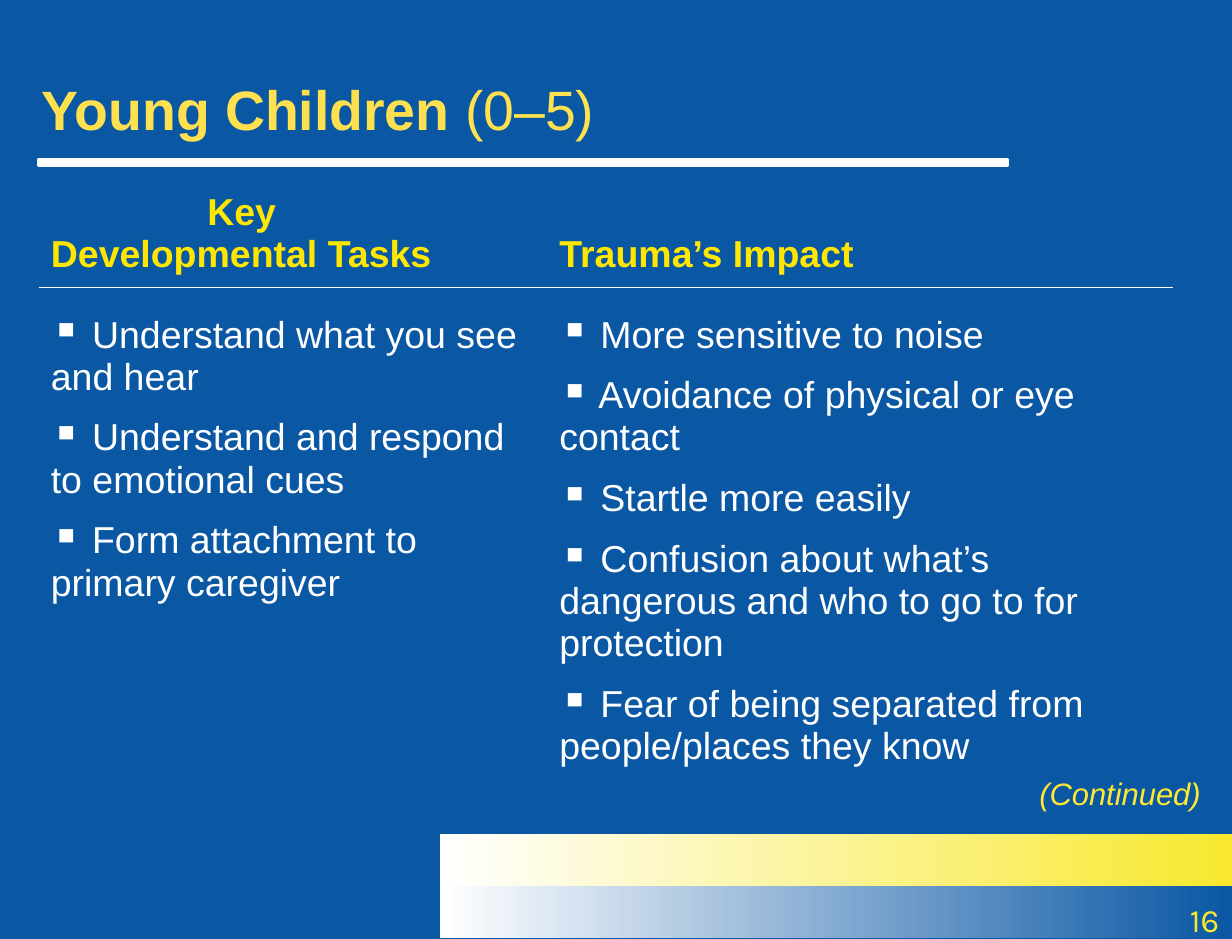
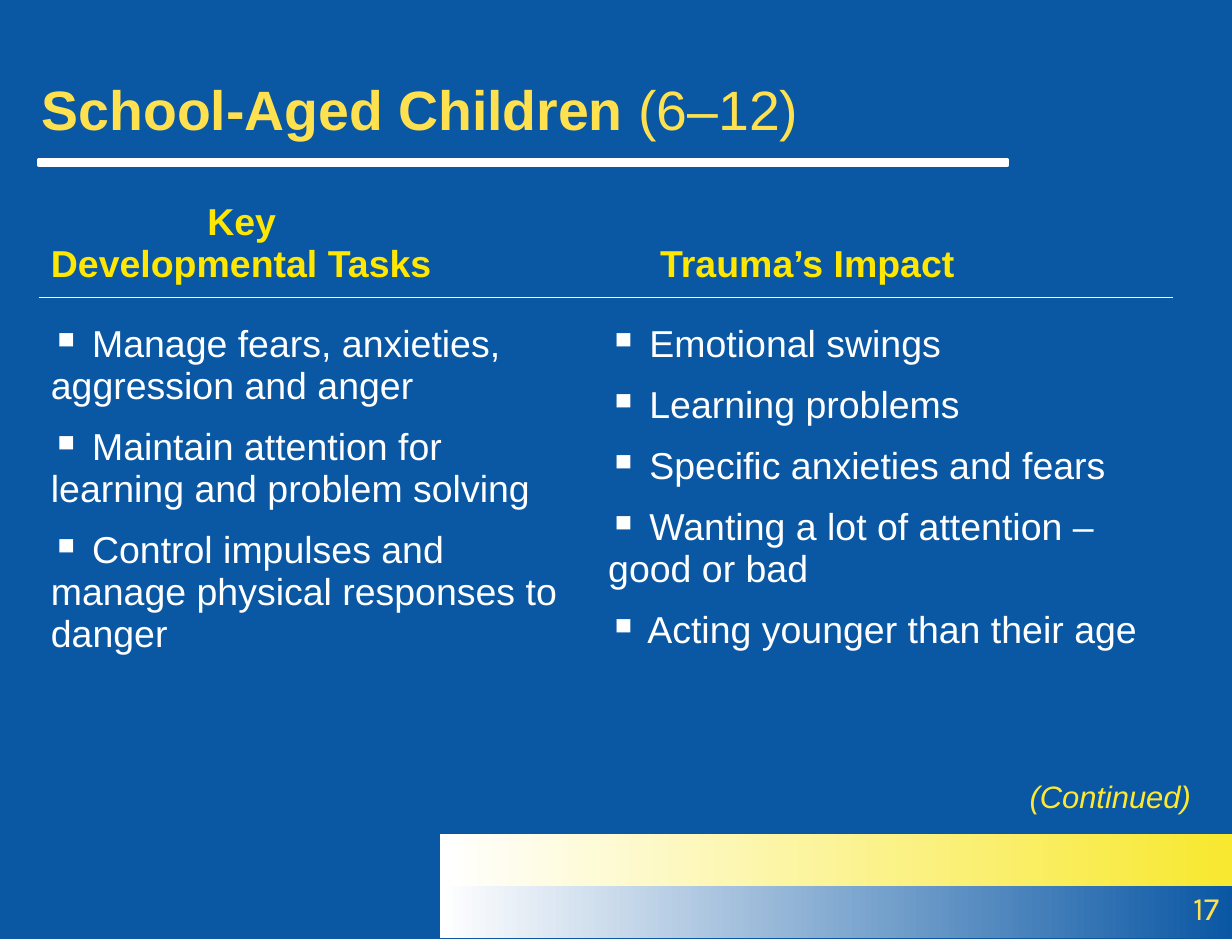
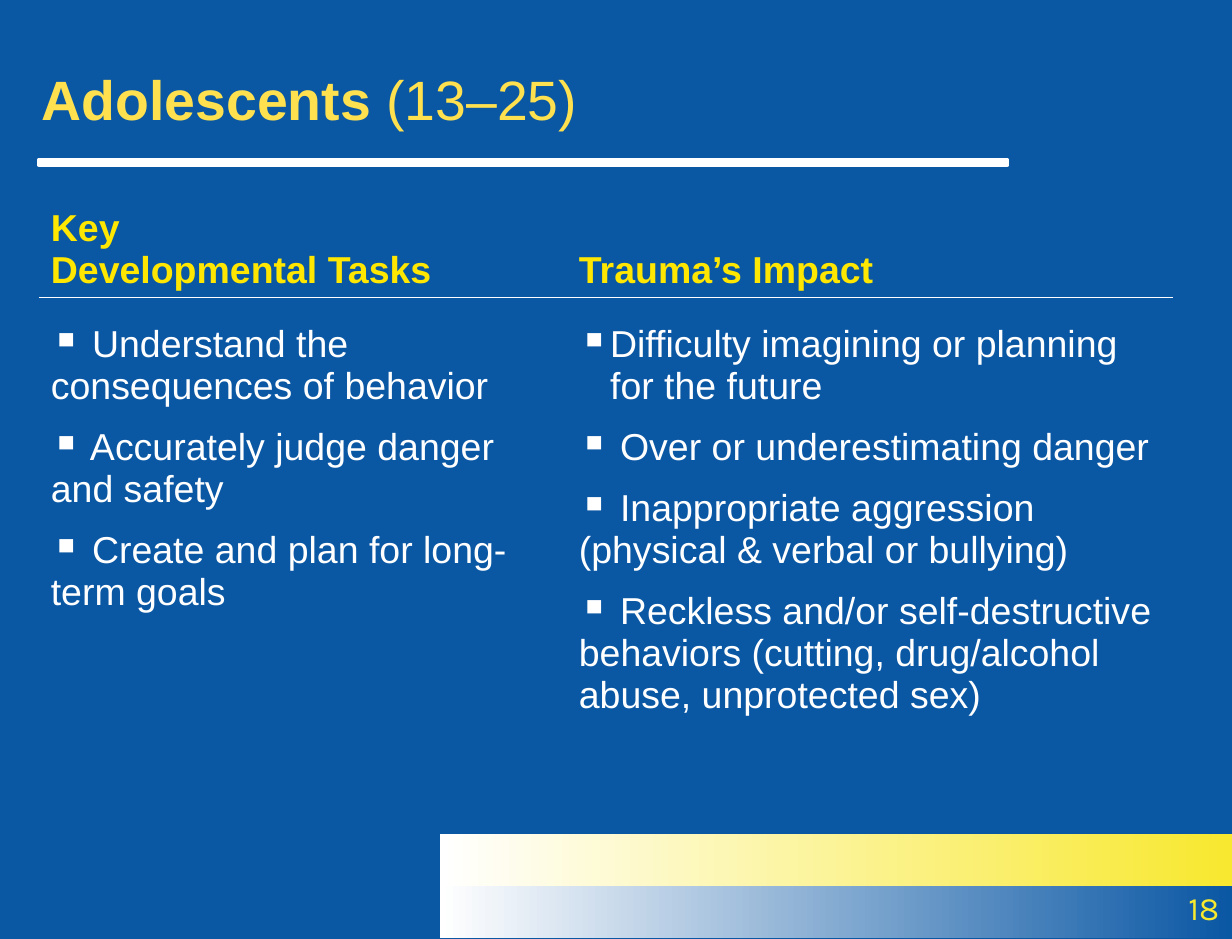
from typing import NamedTuple

from lxml import etree
from pptx import Presentation
from pptx.dml.color import RGBColor
from pptx.enum.shapes import MSO_SHAPE as Shape
from pptx.enum.text import MSO_ANCHOR as Anchor, MSO_AUTO_SIZE as AutoSize, PP_ALIGN as Align
from pptx.oxml.ns import qn
from pptx.util import Pt

EMU_PER_PX = 7620  # 120 px to the inch
WIDTH, HEIGHT = 1260, 960
NO_TABLE_STYLE = "{2D5ABB26-0587-4C30-8999-92F81FD0307C}"

BLUE = RGBColor(0x0A, 0x57, 0xA4)
WHITE = RGBColor(0xFF, 0xFF, 0xFF)
YELLOW = RGBColor(0xF8, 0xE8, 0x2F)
GOLD = RGBColor(0xFF, 0xE1, 0x4F)
HEADING = RGBColor(0xFF, 0xE7, 0x01)
NOTE = RGBColor(0xFF, 0xE8, 0x31)

HEADER_HEIGHT = 104
LEFT = 40


def px(length):
    return length * EMU_PER_PX


class Heading(NamedTuple):
    text: str
    margin: int = 0
    first_line: int = 0


class Bullet(NamedTuple):
    text: str
    hanging: int = 0


class Deck:
    def __init__(self):
        self.presentation = Presentation()
        self.presentation.slide_width = px(WIDTH)
        self.presentation.slide_height = px(HEIGHT)
        self.slide = None

    def new_slide(self):
        """Start a slide with the blue background, title rule and footer bands."""
        self.slide = self.presentation.slides.add_slide(self.presentation.slide_layouts[6])
        background = self.slide.background.fill
        background.solid()
        background.fore_color.rgb = BLUE
        rule = self.rectangle(LEFT, 163, 990, 6)
        rule.fill.solid()
        rule.fill.fore_color.rgb = WHITE
        rule.line.color.rgb = WHITE
        rule.line.width = Pt(2)
        for row, color in enumerate((YELLOW, BLUE)):
            self.band(853 + 53 * row, color)

    def rectangle(self, left, top, width, height):
        shape = self.slide.shapes.add_shape(
            Shape.RECTANGLE, px(left), px(top), px(width), px(height))
        shape.shadow.inherit = False
        return shape

    def band(self, top, color):
        """Draw a footer band that fades from white to the colour."""
        shape = self.rectangle(450, top, 810, 53)
        shape.line.fill.background()
        shape.fill.gradient()
        shape.fill.gradient_angle = 0
        for stop, stop_color in zip(shape.fill.gradient_stops, (WHITE, color)):
            stop.color.rgb = stop_color

    def format(self, paragraph, size, color, bold=False, italic=False, font="Arial"):
        for run in paragraph.runs:
            run.font.name = font
            run.font.size = Pt(size)
            run.font.color.rgb = color
            run.font.bold = bold
            run.font.italic = italic

    def text_box(self, text, left, top, width, height, align=Align.LEFT, wrap=True):
        """Add a one-paragraph text box and return its frame and paragraph."""
        box = self.slide.shapes.add_textbox(px(left), px(top), px(width), px(height))
        frame = box.text_frame
        frame.word_wrap = wrap
        paragraph = frame.paragraphs[0]
        paragraph.text = text
        paragraph.alignment = align
        return frame, paragraph

    def title(self, name, ages, top=40):
        frame, paragraph = self.text_box(f"{name} ", 30, top, 970, 150)
        frame.vertical_anchor = Anchor.MIDDLE
        frame.margin_left = frame.margin_right = px(13)
        paragraph.line_spacing = 0.9
        paragraph.add_run().text = ages
        self.format(paragraph, 34, GOLD, bold=True)
        paragraph.runs[1].font.bold = False

    def continued(self, left, top):
        frame, paragraph = self.text_box(
            "(Continued)", left, top, 191, 47, Align.CENTER, wrap=False)
        frame.auto_size = AutoSize.SHAPE_TO_FIT_TEXT
        paragraph.line_spacing = 0.9
        self.format(paragraph, 19, NOTE, italic=True)

    def number(self, number, top=902, color=YELLOW):
        frame, paragraph = self.text_box(str(number), 1170, top, 90, 50, Align.RIGHT)
        frame.margin_left = frame.margin_right = px(13)
        self.format(paragraph, 20, color, font="Karla")

    def table(self, top, widths, body_height, columns, heading_gap=12):
        """Add a table whose columns are pairs of a heading and its bullets."""
        frame = self.slide.shapes.add_table(
            2, len(columns), px(LEFT), px(top), px(sum(widths)), px(HEADER_HEIGHT + body_height))
        table = frame.table
        table.first_row = table.horz_banding = False
        table._tbl.tblPr.find(qn("a:tableStyleId")).text = NO_TABLE_STYLE
        for row, height in zip(table.rows, (HEADER_HEIGHT, body_height)):
            row.height = px(height)
        for index, (heading, bullets) in enumerate(columns):
            table.columns[index].width = px(widths[index])
            self.heading(table.cell(0, index), heading, heading_gap)
            self.bullets(table.cell(1, index), bullets)

    def heading(self, cell, heading, gap):
        cell.fill.background()
        self.underline(cell)
        cell.vertical_anchor = Anchor.BOTTOM
        cell.margin_top = 0
        cell.margin_bottom = px(gap)
        paragraph = cell.text_frame.paragraphs[0]
        paragraph.text = heading.text
        self.indent(paragraph, heading.margin, heading.first_line)
        self.format(paragraph, 23, HEADING, bold=True)

    def bullets(self, cell, bullets):
        cell.fill.background()
        cell.margin_top = px(27)
        frame = cell.text_frame
        for index, bullet in enumerate(bullets):
            paragraph = frame.add_paragraph() if index else frame.paragraphs[0]
            paragraph.text = bullet.text if bullet.hanging else f" {bullet.text}"
            properties = self.indent(paragraph, bullet.hanging, -bullet.hanging)
            etree.SubElement(properties, qn("a:buSzPct")).set("val", "110000")
            etree.SubElement(properties, qn("a:buChar")).set("char", "▪")
            paragraph.space_after = Pt(11.5)
            self.format(paragraph, 23, WHITE)

    def indent(self, paragraph, margin, first_line):
        properties = paragraph._p.get_or_add_pPr()
        properties.set("marL", str(px(margin)))
        properties.set("indent", str(px(first_line)))
        return properties

    def underline(self, cell):
        line = etree.Element(qn("a:lnB"), w=str(Pt(1)))
        fill = etree.SubElement(line, qn("a:solidFill"))
        etree.SubElement(fill, qn("a:srgbClr")).set("val", str(WHITE))
        cell._tc.get_or_add_tcPr().insert(0, line)


def main():
    deck = Deck()
    tasks = "Key\nDevelopmental Tasks"
    impact = "Trauma’s Impact"
    indented_tasks = Heading(tasks, first_line=160)

    deck.new_slide()
    deck.title("Young Children", "(0–5)")
    deck.table(190, (520, 640), 541, [
        (indented_tasks, [
            Bullet("Understand what you see and hear"),
            Bullet("Understand and respond to emotional cues"),
            Bullet("Form attachment to primary caregiver"),
        ]),
        (Heading(impact), [
            Bullet("More sensitive to noise"),
            Bullet("Avoidance of physical or eye contact"),
            Bullet("Startle more easily"),
            Bullet("Confusion about what’s dangerous and who to go to for protection"),
            Bullet("Fear of being separated from\npeople/places they know"),
        ]),
    ])
    deck.continued(1050, 790)
    deck.number(16, top=914)

    deck.new_slide()
    deck.title("School-Aged Children", "(6–12)")
    deck.table(200, (570, 590), 449, [
        (indented_tasks, [
            Bullet("Manage fears, anxieties,\naggression and anger"),
            Bullet("Maintain attention for\nlearning and problem solving"),
            Bullet("Control impulses and manage physical responses to danger"),
        ]),
        (Heading(impact, margin=53), [
            Bullet("Emotional swings"),
            Bullet("Learning problems"),
            Bullet("Specific anxieties and fears"),
            Bullet("Wanting a lot of attention – good or bad"),
            Bullet("Acting younger than their age"),
        ]),
    ])
    deck.continued(1040, 793)
    deck.number(17, color=GOLD)

    deck.new_slide()
    deck.title("Adolescents", "(13–25)", top=30)
    deck.table(200, (540, 620), 543, [
        (Heading(tasks), [
            Bullet("Understand the\nconsequences of behavior"),
            Bullet("Accurately judge danger\nand safety"),
            Bullet("Create and plan for long-term goals"),
        ]),
        (Heading(impact), [
            Bullet("Difficulty imagining or planning\nfor the future", hanging=32),
            Bullet("Over or underestimating danger"),
            Bullet("Inappropriate aggression (physical & verbal or bullying)"),
            Bullet("Reckless and/or self-destructive\n"
                   "behaviors (cutting, drug/alcohol abuse, unprotected sex)"),
        ]),
    ], heading_gap=6)
    deck.number(18)

    deck.presentation.save("out.pptx")


if __name__ == "__main__":
    main()
